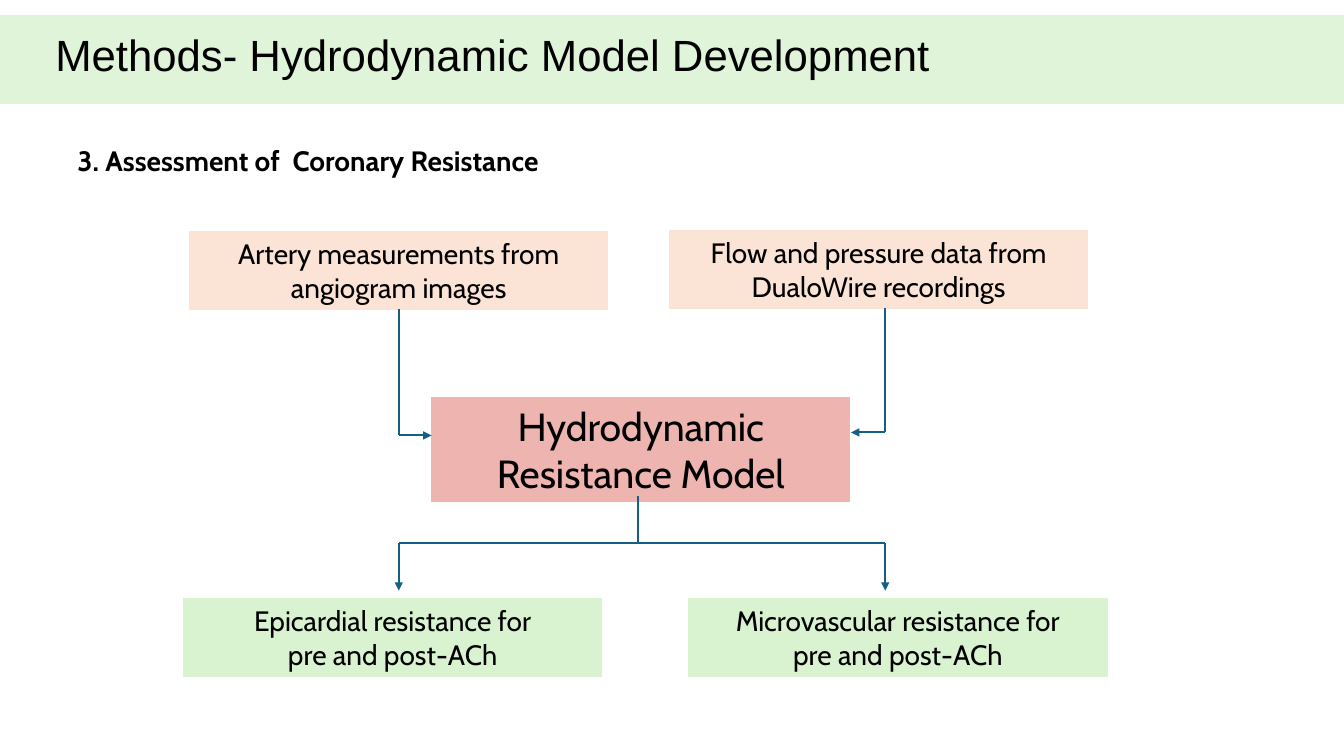
import pptx
import pptx.dml.color
import pptx.enum.shapes
import pptx.enum.text
import pptx.oxml
import pptx.oxml.ns
import pptx.util
from dataclasses import dataclass
from lxml import etree

Inches = pptx.util.Inches
RECTANGLE = pptx.enum.shapes.MSO_SHAPE.RECTANGLE


@dataclass(frozen=True)
class Theme:
    """Colours, fonts and type sizes of the slide."""
    ink: str = "000000"
    green: str = "D9F2D0"
    peach: str = "FBE3D6"
    rose: str = "EEB5B0"
    arrow: str = "156082"
    title_font: str = "Arial"
    body_font: str = "Cabin"
    title_size: float = 31.2
    body_size: float = 20
    model_size: float = 28
    arrow_width: float = 1.5
    outline_width: float = 0.75


THEME = Theme()


def rgb(colour):
    """Turn a hex string into a colour."""
    return pptx.dml.color.RGBColor.from_string(colour)


def write(holder, wording, size, font=THEME.body_font, bold=False, grow=True):
    """Put one formatted paragraph into a shape and return it."""
    frame = holder.text_frame
    frame.word_wrap = True
    if grow:
        frame.auto_size = pptx.enum.text.MSO_AUTO_SIZE.SHAPE_TO_FIT_TEXT
    paragraph = frame.paragraphs[0]
    paragraph.text = wording
    for run in paragraph.runs:
        run.font.size = pptx.util.Pt(size)
        run.font.name = font
        run.font.bold = bold
        run.font.color.rgb = rgb(THEME.ink)
    return paragraph


def add_panel(slide, box, colour):
    """Add a plain filled rectangle."""
    panel = slide.shapes.add_shape(RECTANGLE, *map(Inches, box))
    panel.shadow.inherit = False
    panel.fill.solid()
    panel.fill.fore_color.rgb = rgb(colour)
    panel.line.fill.background()
    return panel


def add_step(slide, box, wording, colour, size=THEME.body_size):
    """Add one labelled box of the flow chart."""
    step = add_panel(slide, box, colour)
    step.line.color.rgb = rgb(colour)
    step.line.width = pptx.util.Pt(THEME.outline_width)
    paragraph = write(step, wording, size)
    paragraph.alignment = pptx.enum.text.PP_ALIGN.CENTER
    step.text_frame.vertical_anchor = pptx.enum.text.MSO_ANCHOR.TOP
    return step


def add_link(slide, start, end, arrow=False):
    """Draw a straight line, with an arrowhead at its end if asked."""
    link = slide.shapes.add_connector(
        pptx.enum.shapes.MSO_CONNECTOR.STRAIGHT, *map(Inches, (*start, *end)))
    link.line.color.rgb = rgb(THEME.arrow)
    link.line.width = pptx.util.Pt(THEME.arrow_width)
    properties = link._element.spPr
    if arrow:
        etree.SubElement(link.line._get_or_add_ln(),
                         pptx.oxml.ns.qn("a:tailEnd"), type="triangle")
    etree.SubElement(properties, pptx.oxml.ns.qn("a:effectLst"))
    return link


def add_header(slide, box):
    """Add the translucent title band and its title."""
    left, top, width, height = box
    band = add_panel(slide, box, THEME.green)
    colour = band._element.spPr.find(".//" + pptx.oxml.ns.qn("a:srgbClr"))
    etree.SubElement(colour, pptx.oxml.ns.qn("a:alpha"), val="82000")
    title = slide.shapes.add_textbox(
        *map(Inches, (left + 0.45, top + 0.1, width - 0.78, 0.63)))
    paragraph = write(title, "Methods- Hydrodynamic Model Development",
                      THEME.title_size, THEME.title_font, grow=False)
    paragraph.line_spacing = 0.9
    title.text_frame.vertical_anchor = pptx.enum.text.MSO_ANCHOR.MIDDLE


def add_heading(slide, box):
    """Add the section heading."""
    heading = slide.shapes.add_textbox(*map(Inches, box))
    write(heading, "3. Assessment of  Coronary Resistance",
          THEME.body_size, bold=True)


def add_flow(slide, box):
    """Add the flow from two inputs through the model to two outputs."""
    left, top, width, height = box
    step_width, step_height, model_height = 4.15, 0.77, 1.04
    model_left, model_top = left + 2.46, top + 1.65
    model_right = model_left + step_width
    output_top = top + height - step_height

    artery = add_step(slide, (left + 0.06, top + 0.01, step_width, step_height),
                      "Artery measurements from angiogram images", THEME.peach)
    add_step(slide, (left + 4.82, top, step_width, step_height),
             "Flow and pressure data from DualoWire recordings", THEME.peach)
    add_step(slide, (model_left, model_top, step_width, model_height),
             "Hydrodynamic Resistance Model", THEME.rose, THEME.model_size)
    outputs = ((left, "Epicardial"), (left + width - step_width, "Microvascular"))
    for output_left, kind in outputs:
        add_step(slide, (output_left, output_top, step_width, step_height),
                 f"{kind} resistance for\npre and post-ACh", THEME.green)

    artery_x = left + 0.06 + step_width / 2
    flow_x = left + 6.96
    stem_x = left + 4.51
    artery_y, flow_y = model_top + 0.38, model_top + 0.35
    fork_y = model_top + 1.45
    input_bottom = top + step_height

    artery_drop = add_link(slide, (artery_x, input_bottom + 0.01),
                           (artery_x, artery_y))
    artery_drop.begin_connect(artery, 2)
    add_link(slide, (flow_x, input_bottom), (flow_x, flow_y))
    add_link(slide, (artery_x, artery_y), (model_left, artery_y), arrow=True)
    add_link(slide, (flow_x, flow_y), (model_right + 0.01, flow_y), arrow=True)
    add_link(slide, (stem_x, model_top + 0.98), (stem_x, fork_y))
    add_link(slide, (artery_x, fork_y), (flow_x, fork_y))
    for output_x in (artery_x, flow_x):
        add_link(slide, (output_x, fork_y), (output_x, output_top - 0.08),
                 arrow=True)


def main():
    """Build the slide and save it."""
    deck = pptx.Presentation()
    deck.slide_width, deck.slide_height = Inches(13.33), Inches(7.5)
    slide = deck.slides.add_slide(deck.slide_layouts[6])
    add_header(slide, (0, 0.15, 13.33, 0.88))
    add_heading(slide, (0.67, 1.37, 9.46, 0.44))
    add_flow(slide, (1.82, 2.29, 9.16, 4.42))
    deck.save("out.pptx")


if __name__ == "__main__":
    main()
